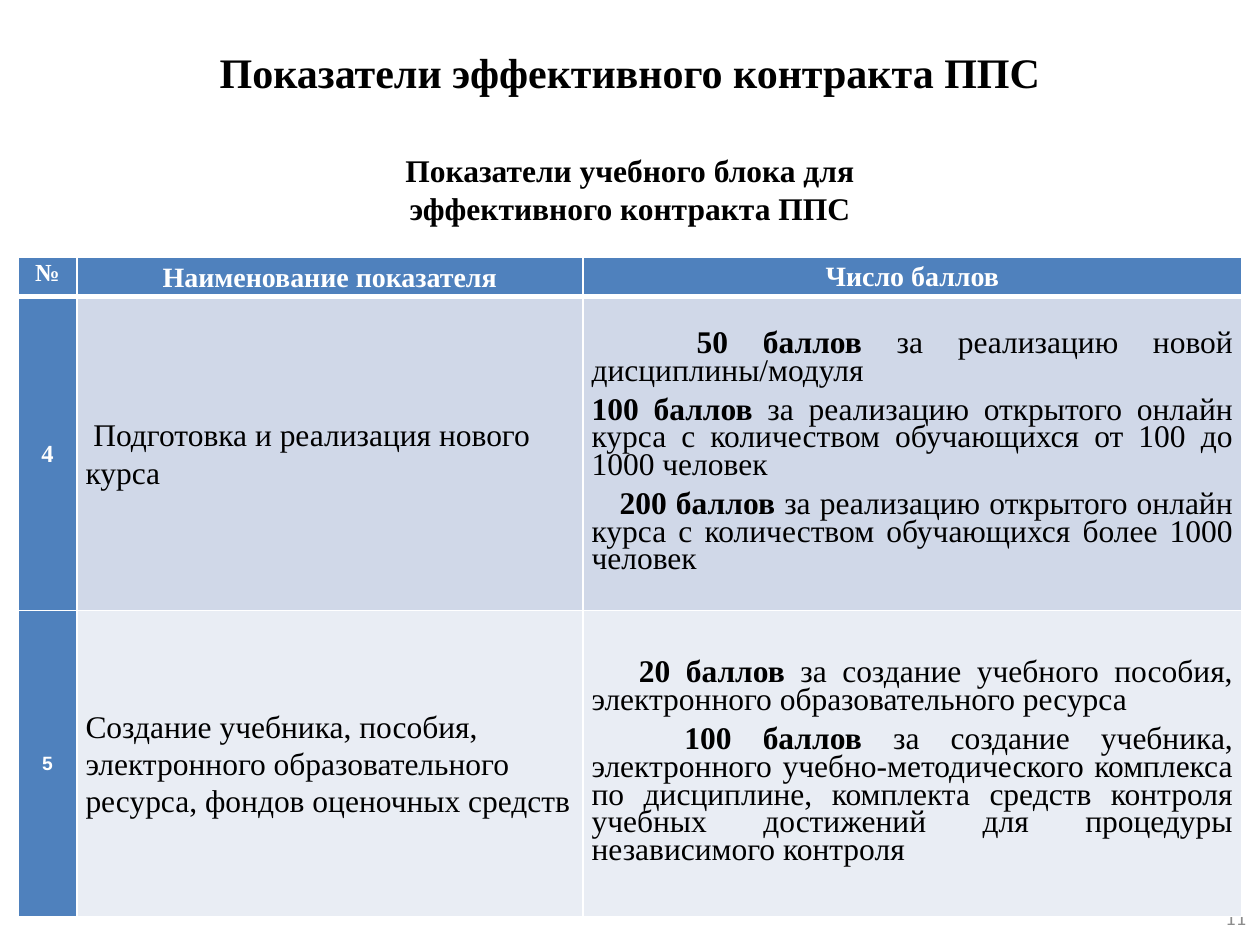
from dataclasses import dataclass

from lxml import etree
from pptx import Presentation
from pptx.dml.color import RGBColor
from pptx.enum.text import MSO_ANCHOR, PP_ALIGN
from pptx.oxml.ns import qn
from pptx.util import Pt

CENTER, LEFT, RIGHT, JUSTIFY = PP_ALIGN.CENTER, PP_ALIGN.LEFT, PP_ALIGN.RIGHT, PP_ALIGN.JUSTIFY
TOP, MIDDLE = MSO_ANCHOR.TOP, MSO_ANCHOR.MIDDLE
SERIF = "Times New Roman"
BLACK, WHITE, GREY = "000000", "FFFFFF", "8C8C8C"
BLUE, BAND_DARK, BAND_LIGHT = "4F81BD", "D0D8E8", "E9EDF4"


@dataclass
class Run:
    text: str
    size: float = 18
    bold: bool = False
    color: str = BLACK
    font: str = SERIF


@dataclass
class Para:
    runs: list[Run]
    align: PP_ALIGN = CENTER
    line: float = 1.0
    after: float = 0
    indent: float = 0


@dataclass
class Cell:
    paras: list[Para]
    fill: str
    anchor: MSO_ANCHOR = MIDDLE


def rgb(value: str) -> RGBColor:
    return RGBColor.from_string(value)


def write(tf, paras: list[Para]) -> None:
    for i, para in enumerate(paras):
        p = tf.paragraphs[0] if i == 0 else tf.add_paragraph()
        p.alignment = para.align
        p.line_spacing = para.line
        p.space_before, p.space_after = Pt(0), Pt(para.after)
        if para.indent:
            p._p.get_or_add_pPr().set("indent", str(Pt(para.indent)))
        for run in para.runs:
            r = p.add_run()
            r.text = run.text
            r.font.name, r.font.size, r.font.bold = run.font, Pt(run.size), run.bold
            r.font.color.rgb = rgb(run.color)


def add_text(s, left: float, top: float, width: float, height: float,
             para: Para, anchor: MSO_ANCHOR = MIDDLE) -> None:
    sp = s.shapes.add_textbox(Pt(left), Pt(top), Pt(width), Pt(height))
    tf = sp.text_frame
    tf.word_wrap = True
    tf.vertical_anchor = anchor
    write(tf, [para])


def set_border(cell, side: str, width: float) -> None:
    ln = etree.SubElement(cell._tc.get_or_add_tcPr(), qn(f"a:{side}"), w=str(Pt(width)))
    fill = etree.SubElement(ln, qn("a:solidFill"))
    etree.SubElement(fill, qn("a:srgbClr"), val=WHITE)


def add_table(s, left: float, top: float, widths: list[float], heights: list[float],
              rows: list[list[Cell]]) -> None:
    tbl = s.shapes.add_table(len(rows), len(widths), Pt(left), Pt(top),
                             Pt(sum(widths)), Pt(sum(heights))).table
    tbl.first_row = tbl.horz_banding = False
    for col, width in zip(tbl.columns, widths):
        col.width = Pt(width)
    for i, (row, height) in enumerate(zip(rows, heights)):
        tbl.rows[i].height = Pt(height)
        for j, item in enumerate(row):
            cell = tbl.cell(i, j)
            cell.margin_left = cell.margin_right = Pt(5)
            cell.margin_top = cell.margin_bottom = Pt(0)
            cell.vertical_anchor = item.anchor
            # The rule under the header is heavier than the others
            for side, width in (("lnL", 1), ("lnR", 1), ("lnT", 3 if i == 1 else 1),
                                ("lnB", 3 if i == 0 else 1)):
                set_border(cell, side, width)
            cell.fill.solid()
            cell.fill.fore_color.rgb = rgb(item.fill)
            write(cell.text_frame, item.paras)


def label(text: str, size: float, font: str = SERIF, anchor: MSO_ANCHOR = MIDDLE,
          line: float = 1.07, after: float = 8) -> Cell:
    """White bold text on blue."""
    return Cell([Para([Run(text, size, True, WHITE, font)], CENTER, line, after)], BLUE, anchor)


def indicator(text: str, fill: str, indent: float = 0) -> Cell:
    return Cell([Para([Run(text)], LEFT, 1.07, 8, indent)], fill)


def points(score: str, text: str, indent: float = 0, after: float = 6) -> Para:
    return Para([Run(score, bold=True), Run(f" {text}")], JUSTIFY, 0.8, after, indent)


ROWS = [
    [label("№", 14, anchor=TOP),
     label("Наименование показателя", 16),
     label("Число баллов", 16, line=1, after=0)],
    [label("4", 14),
     indicator("Подготовка и реализация нового курса", BAND_DARK, 4.5),
     Cell([points("50 баллов", "за реализацию новой дисциплины/модуля", 60),
           points("100 баллов", "за реализацию открытого онлайн курса с количеством "
                  "обучающихся от 100 до 1000 человек"),
           points("200 баллов", "за реализацию открытого онлайн курса с количеством "
                  "обучающихся более 1000 человек", 16, 0)], BAND_DARK)],
    [label("5", 11, "Arial"),
     indicator("Создание учебника, пособия, электронного образовательного ресурса, "
               "фондов оценочных средств", BAND_LIGHT),
     Cell([points("20 баллов", "за создание учебного пособия, электронного "
                  "образовательного ресурса", 27),
           points("100 баллов", "за создание учебника, электронного учебно-методического "
                  "комплекса по дисциплине, комплекта средств контроля учебных достижений "
                  "для процедуры независимого контроля", 53)], BAND_LIGHT)],
]


def main() -> None:
    prs = Presentation()
    prs.slide_width, prs.slide_height = Pt(720), Pt(540)
    s = prs.slides.add_slide(prs.slide_layouts[6])

    # Title and page number
    add_text(s, 36, 21.6, 648, 38.2,
             Para([Run("Показатели эффективного контракта ППС", 24, True)]))
    add_text(s, 551.5, 509.8, 167.8, 28.8,
             Para([Run("11", 12, color=GREY, font="Calibri")], RIGHT))

    # Indicators and scores
    add_table(s, 10.4, 147.2, [33.5, 289.2, 376.6], [22.3, 179.3, 175], ROWS)

    # Subtitle
    add_text(s, 180, 82.8, 360, 51.1,
             Para([Run("Показатели учебного блока для эффективного контракта ППС", 18, True)]), TOP)

    prs.save("out.pptx")


if __name__ == "__main__":
    main()
